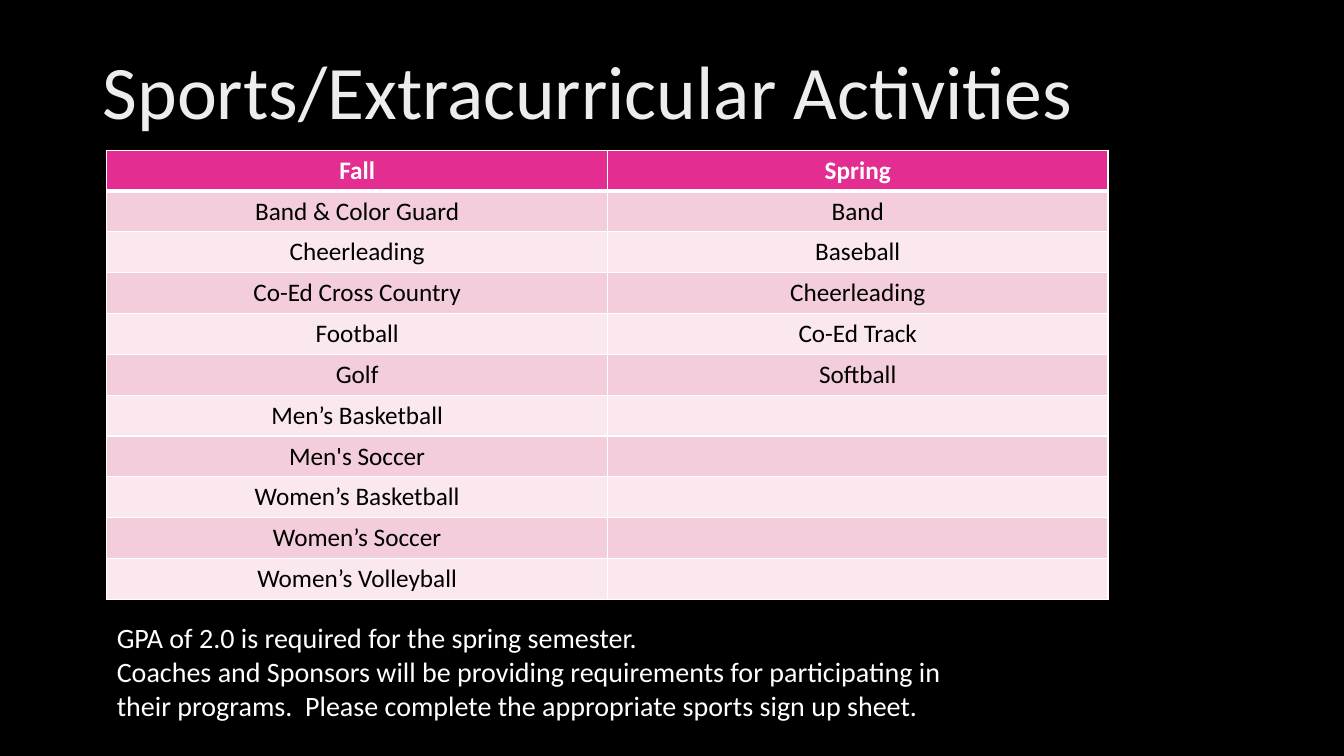
from itertools import zip_longest

from lxml.etree import SubElement as Sub
from pptx import Presentation
from pptx.dml.color import RGBColor as RGB
from pptx.enum.text import MSO_ANCHOR as Anchor, PP_ALIGN as Align
from pptx.oxml.ns import qn
from pptx.util import Inches, Pt

BLACK = RGB(0x00, 0x00, 0x00)
WHITE = RGB(0xFF, 0xFF, 0xFF)
SILVER = RGB(0xED, 0xED, 0xED)
PINK = RGB(0xE3, 0x2D, 0x91)
ROSE = RGB(0xF4, 0xCD, 0xDC)
BLUSH = RGB(0xFA, 0xE8, 0xEE)

TITLE = "Sports/Extracurricular Activities"
FALL = ["Fall", "Band & Color Guard", "Cheerleading", "Co-Ed Cross Country",
        "Football", "Golf", "Men’s Basketball", "Men's Soccer",
        "Women’s Basketball", "Women’s Soccer", "Women’s Volleyball"]
SPRING = ["Spring", "Band", "Baseball", "Cheerleading", "Co-Ed Track", "Softball"]
NOTES = ["GPA of 2.0 is required for the spring semester.",
         "Coaches and Sponsors will be providing requirements for participating in",
         "their programs.  Please complete the appropriate sports sign up sheet."]


def style(frame, size, color, bold=False):
    """Format every run in a text frame."""
    for para in frame.paragraphs:
        for run in para.runs:
            font = run.font
            font.name, font.size, font.bold = "Calibri", Pt(size), bold
            font.color.rgb = color


def add_text(slide, box, lines, size, color):
    """Place a wrapped text box with one paragraph per line."""
    frame = slide.shapes.add_textbox(*map(Inches, box)).text_frame
    frame.word_wrap = True
    frame.text = "\n".join(lines)
    style(frame, size, color)
    return frame


def add_title(slide, box):
    """Place the slide title, centred vertically in its box."""
    frame = add_text(slide, box, [TITLE], 54, SILVER)
    frame.vertical_anchor = Anchor.MIDDLE
    frame.paragraphs[0].line_spacing = 0.9


def add_edges(cell, top, bottom):
    """Draw white borders around a cell, with widths in points."""
    props = cell._tc.get_or_add_tcPr()
    for side, width in (("L", 1), ("R", 1), ("T", top), ("B", bottom)):
        line = Sub(props, qn(f"a:ln{side}"), w=str(Pt(width)))
        Sub(Sub(line, qn("a:solidFill")), qn("a:srgbClr"), val=str(WHITE))


def add_grid(slide, box):
    """Place the table of fall and spring activities."""
    rows = list(zip_longest(FALL, SPRING, fillvalue=""))
    table = slide.shapes.add_table(len(rows), 2, *map(Inches, box)).table
    for r, names in enumerate(rows):
        head = r == 0
        fill = PINK if head else (BLUSH, ROSE)[r % 2]
        for c, name in enumerate(names):
            cell = table.cell(r, c)
            add_edges(cell, 3 if r == 1 else 1, 3 if head else 1)
            cell.fill.solid()
            cell.fill.fore_color.rgb = fill
            frame = cell.text_frame
            frame.text = name
            frame.paragraphs[0].alignment = Align.CENTER
            style(frame, 18, WHITE if head else BLACK, head)


def main():
    """Build and save the activities slide."""
    deck = Presentation()
    deck.slide_width, deck.slide_height = Inches(13.33), Inches(7.5)
    slide = deck.slides.add_slide(deck.slide_layouts[6])
    back = slide.background.fill
    back.solid()
    back.fore_color.rgb = BLACK
    add_title(slide, (0.92, 0.4, 11.5, 1.09))
    add_text(slide, (1.06, 6.11, 10.45, 1.11), NOTES, 20, WHITE)
    add_grid(slide, (1.06, 1.49, 9.93, 4.46))
    deck.save("out.pptx")


if __name__ == "__main__":
    main()
